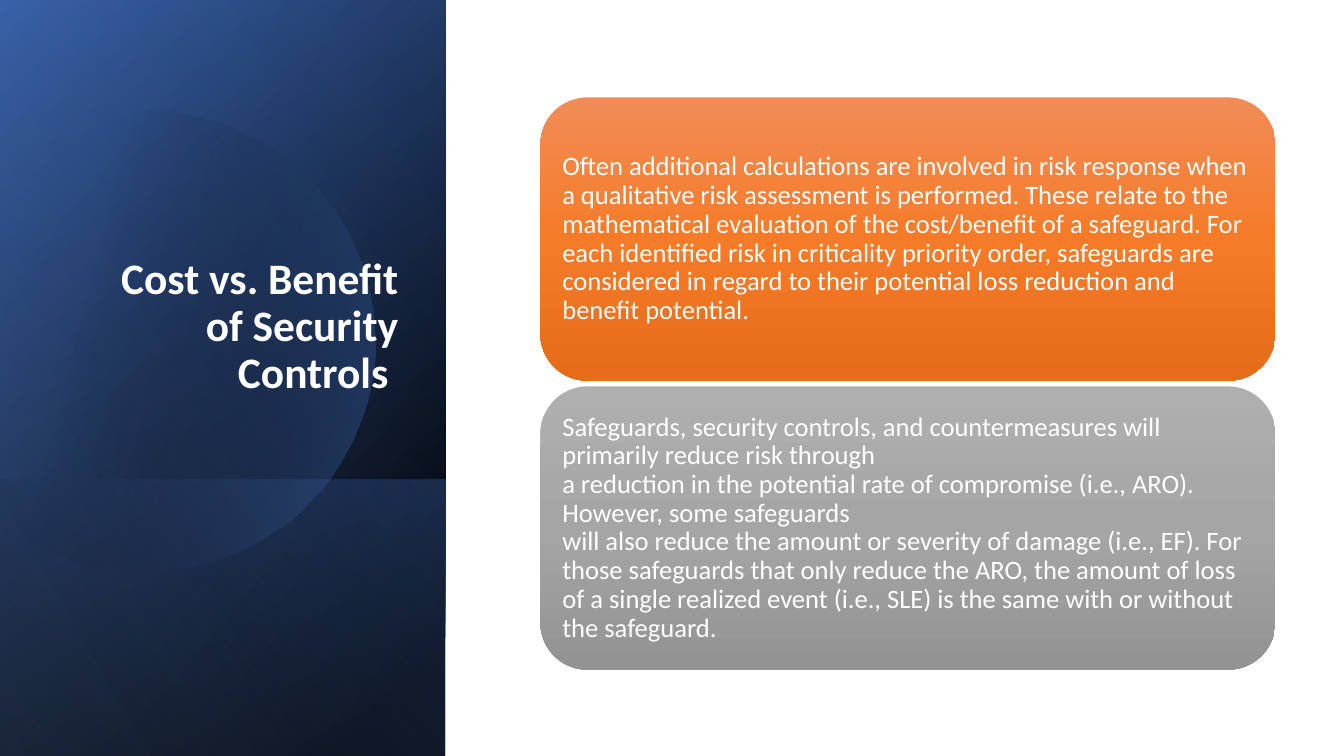
from lxml import etree
from pptx import Presentation
from pptx.dml.color import RGBColor as RGB
from pptx.enum.shapes import MSO_SHAPE as SHAPE
from pptx.enum.text import MSO_ANCHOR as ANCHOR, MSO_AUTO_SIZE as AUTO, PP_ALIGN as ALIGN
from pptx.oxml.ns import qn
from pptx.util import Pt

COLORS = {
    "black": "000000", "white": "FFFFFF", "navy": "2F5597",
    "blue": "4472C4", "pale_blue": "8FAADC",
    "orange_light": "F18C57", "orange": "F67B28", "orange_dark": "E56C19",
    "gray_light": "AFAFAF", "gray": "A5A5A5", "gray_dark": "939393",
}
PANEL_W, SLIDE_W, SLIDE_H = 318.2, 960, 540

# Each panel layer: top edge, gradient angle, stops of (position, color, opacity)
BACK_LAYERS = [
    (0, 50, [(8, "black", 100), (100, "navy", 100)]),
    (0, 30, [(0, "black", 0), (99, "blue", 46)]),
    (342.7, 130, [(2, "blue", 29), (100, "black", 30)]),
]
DISC_STOPS = [(29, "black", 0), (100, "blue", 43)]
GLOW_LAYER = (0, 120, [(0, "black", 0), (99, "pale_blue", 11)])

DISC_START = (107.3, 79.2)
# Cubic curves (two controls, end) and straight edges (end only)
DISC_SEGMENTS = [
    [(177.1, 80.6), (241.2, 127.4), (261.4, 198)],
    [(286.6, 285.8), (236.2, 376.6), (149, 401.8)],
    [(94.3, 417.6), (38.2, 403.9), (-2.2, 370.1)],
    [(-10.8, 362.2)],
    [(-10.8, 126)],
    [(0, 115.9)],
    [(16.6, 102.2), (36, 92.2), (57.6, 85.7)],
    [(74.2, 81.4), (90.7, 79.2), (107.3, 79.2)],
]

CARDS = [
    (("orange_light", "orange", "orange_dark"), [
        "Often additional calculations are involved in risk response when a qualitative "
        "risk assessment is performed. These relate to the mathematical evaluation of the "
        "cost/benefit of a safeguard. For each identified risk in criticality priority "
        "order, safeguards are considered in regard to their potential loss reduction "
        "and benefit potential.",
    ]),
    (("gray_light", "gray", "gray_dark"), [
        "Safeguards, security controls, and countermeasures will primarily reduce risk through",
        "a reduction in the potential rate of compromise (i.e., ARO). However, some safeguards",
        "will also reduce the amount or severity of damage (i.e., EF). For those safeguards "
        "that only reduce the ARO, the amount of loss of a single realized event (i.e., SLE) "
        "is the same with or without the safeguard.",
    ]),
]


def write_text(tf, lines, size, color="white", bold=False, align=ALIGN.LEFT,
               anchor=ANCHOR.MIDDLE, insets=(5.8, 5.8, 5.8, 5.8)):
    """Fill a text frame with one paragraph; lines are parted by line breaks."""
    tf.word_wrap, tf.auto_size, tf.vertical_anchor = True, AUTO.NONE, anchor
    (tf.margin_left, tf.margin_top,
     tf.margin_right, tf.margin_bottom) = [Pt(v) for v in insets]
    p = tf.paragraphs[0]
    p.alignment, p.line_spacing = align, 0.9
    for i, line in enumerate(lines):
        if i:
            p.add_line_break()
        r = p.add_run()
        r.text = line
        r.font.name, r.font.size, r.font.bold = "Calibri", Pt(size), bold
        r.font.color.rgb = RGB.from_string(COLORS[color])


def curve_points(start, segment, steps=24):
    """Sample a cubic curve; a straight edge yields its end only."""
    if len(segment) == 1:
        return segment
    points = []
    for i in range(1, steps + 1):
        t = i / steps
        weights = ((1 - t) ** 3, 3 * t * (1 - t) ** 2, 3 * t * t * (1 - t), t ** 3)
        points.append(tuple(sum(w * pt[axis] for w, pt in zip(weights, (start, *segment)))
                            for axis in (0, 1)))
    return points


class SlideBuilder:
    def __init__(self, slide):
        self.slide = slide
        self.shapes = slide.shapes

    def paint(self, sp, angle, stops):
        """Give a shape a linear gradient with opacity, and no line or shadow."""
        sp.shadow.inherit = False
        sp.line.fill.background()
        sp.fill.gradient()
        grad = sp.element.spPr.find(qn("a:gradFill"))
        for child in list(grad):
            grad.remove(child)
        grad.set("rotWithShape", "1")
        stop_list = etree.SubElement(grad, qn("a:gsLst"))
        for pos, color, opacity in stops:
            gs = etree.SubElement(stop_list, qn("a:gs"), pos=str(pos * 1000))
            clr = etree.SubElement(gs, qn("a:srgbClr"), val=COLORS[color])
            if opacity < 100:
                etree.SubElement(clr, qn("a:alpha"), val=str(opacity * 1000))
        etree.SubElement(grad, qn("a:lin"), ang=str(round(angle * 60000)), scaled="0")

    def panel(self, top, angle, stops):
        """Add a left panel layer, mirrored and turned a quarter, down to the slide's foot."""
        height = SLIDE_H - top
        left = (PANEL_W - height) / 2
        sp = self.shapes.add_shape(SHAPE.RECTANGLE, Pt(left), Pt(top + (height - PANEL_W) / 2),
                                   Pt(height), Pt(PANEL_W))
        sp.rotation = 90
        sp.element.spPr.find(qn("a:xfrm")).set("flipH", "1")
        self.paint(sp, angle, stops)

    def disc(self, angle, stops):
        points = [DISC_START]
        for segment in DISC_SEGMENTS:
            points += curve_points(points[-1], segment)
        builder = self.shapes.build_freeform(*DISC_START, scale=Pt(1))
        builder.add_line_segments(points[1:], close=True)
        self.paint(builder.convert_to_shape(), angle, stops)

    def title(self, lines):
        sp = self.shapes.title
        sp.element.getparent().append(sp.element)  # in front of the panel
        sp.left, sp.top, sp.width, sp.height = Pt(46), Pt(132.5), Pt(245.5), Pt(188.6)
        write_text(sp.text_frame, lines, 31, bold=True, align=ALIGN.RIGHT,
                   anchor=ANCHOR.BOTTOM, insets=(7.2, 3.6, 7.2, 37.2))

    def card(self, top, colors, lines):
        sp = self.shapes.add_shape(SHAPE.ROUNDED_RECTANGLE, Pt(386), Pt(top),
                                   Pt(525), Pt(202.3))
        self.paint(sp, 90, [(pos, c, 100) for pos, c in zip((0, 50, 100), colors)])
        write_text(sp.text_frame, lines, 19)


def main():
    prs = Presentation()
    prs.slide_width, prs.slide_height = Pt(SLIDE_W), Pt(SLIDE_H)
    s = SlideBuilder(prs.slides.add_slide(prs.slide_layouts[5]))
    for layer in BACK_LAYERS:
        s.panel(*layer)
    s.disc(13.9, DISC_STOPS)
    s.panel(*GLOW_LAYER)
    s.title(["Cost vs. Benefit of Security Controls "])
    for i, (colors, lines) in enumerate(CARDS):
        s.card(69.6 + i * 206.4, colors, lines)
    prs.save("out.pptx")


if __name__ == "__main__":
    main()
